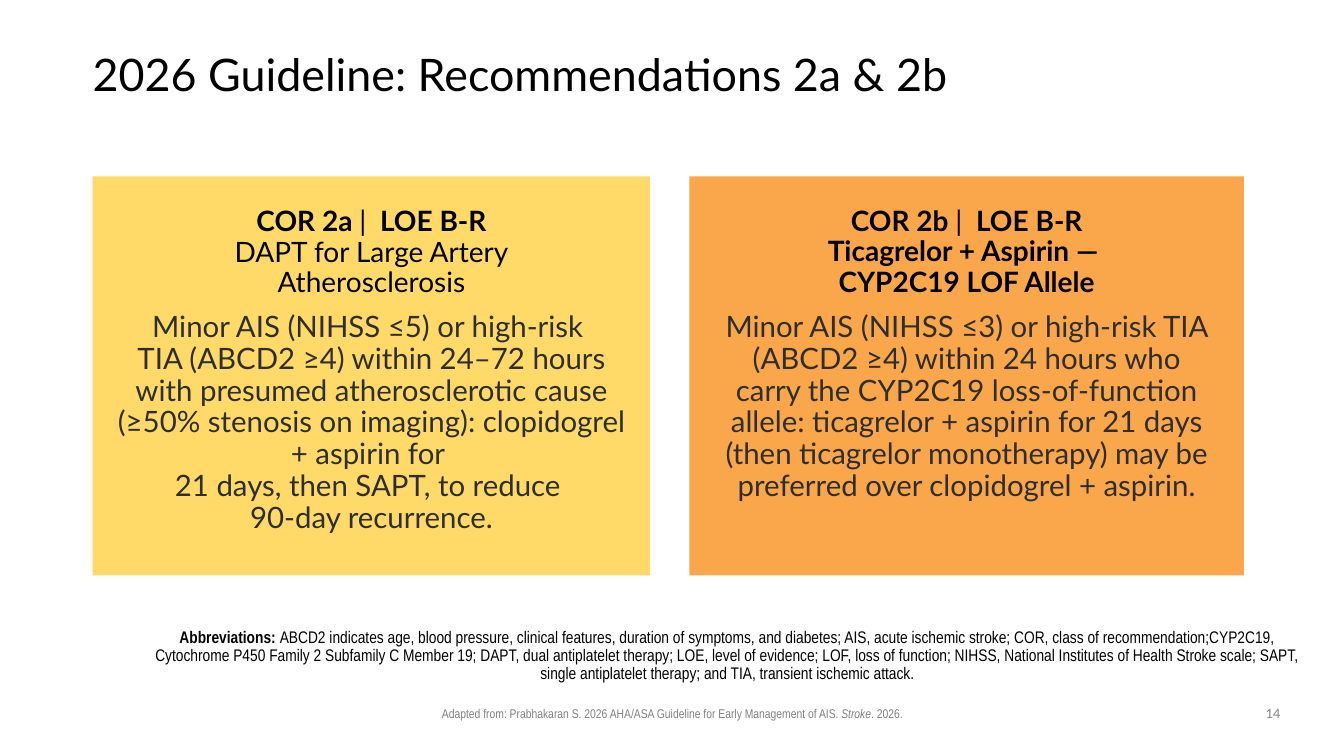
from pptx import Presentation
from pptx.dml.color import RGBColor
from pptx.enum.shapes import MSO_SHAPE
from pptx.enum.text import MSO_ANCHOR, PP_ALIGN
from pptx.util import Inches, Pt

RECTANGLE = MSO_SHAPE.RECTANGLE
TOP, MIDDLE, BOTTOM = MSO_ANCHOR.TOP, MSO_ANCHOR.MIDDLE, MSO_ANCHOR.BOTTOM
LEFT, CENTER = PP_ALIGN.LEFT, PP_ALIGN.CENTER

BODY_FONT, NOTE_FONT = "Lato", "Arial Narrow"
BLACK, CHARCOAL, GRAY = "000000", "2E2E2E", "808080"
YELLOW, ORANGE = "FFDA68", "FAA74B"
CARD_TOP, CARD_HEIGHT, CARD_TEXT_TOP = 23.33, 52.8, 26.8
FOOTER_TOP = 92.67


def color(value):
    return RGBColor.from_string(value)


class GuidelineSlide:
    """Places elements by percentages of the slide's width and height."""

    def __init__(self, deck):
        self.width, self.height = deck.slide_width, deck.slide_height
        self.shapes = deck.slides.add_slide(deck.slide_layouts[6]).shapes

    def area(self, left, top, width, height):
        return (
            int(left * self.width / 100),
            int(top * self.height / 100),
            int(width * self.width / 100),
            int(height * self.height / 100),
        )

    def panel(self, area, fill):
        panel = self.shapes.add_shape(RECTANGLE, *self.area(*area))
        panel.shadow.inherit = False
        panel.fill.solid()
        panel.fill.fore_color.rgb = color(fill)
        panel.line.fill.background()

    def frame(self, area, anchor=TOP, insets=(0.1, 0.05, 0.1, 0.05)):
        frame = self.shapes.add_textbox(*self.area(*area)).text_frame
        frame.word_wrap = True
        frame.vertical_anchor = anchor
        (frame.margin_left, frame.margin_top,
         frame.margin_right, frame.margin_bottom) = map(Inches, insets)
        return frame

    def fill_paragraph(self, paragraph, parts, size, shade=BLACK,
                       font=BODY_FONT, align=CENTER, spacing=0.9):
        paragraph.alignment = align
        paragraph.line_spacing = spacing
        paragraph.font.size = Pt(size)
        paragraph.font.name = font
        paragraph.font.color.rgb = color(shade)
        for text, emphasis in parts:
            for index, line in enumerate(text.split("\n")):
                if index:
                    paragraph.add_line_break()
                if line:
                    run = paragraph.add_run()
                    run.text = line
                    if emphasis == "bold":
                        run.font.bold = True
                    elif emphasis == "italic":
                        run.font.italic = True

    def text(self, area, parts, size, anchor=TOP,
             insets=(0.1, 0.05, 0.1, 0.05), **style):
        frame = self.frame(area, anchor, insets)
        self.fill_paragraph(frame.paragraphs[0], parts, size, **style)

    def card(self, left, width, margin, text_height, fill, heading, advice):
        self.panel((left, CARD_TOP, width, CARD_HEIGHT), fill)
        frame = self.frame(
            (left + margin, CARD_TEXT_TOP, width - 2 * margin, text_height))
        self.fill_paragraph(frame.paragraphs[0], heading, 20)
        recommendation = frame.add_paragraph()
        recommendation.space_before = Pt(10)
        self.fill_paragraph(recommendation, [(advice, None)], 21, CHARCOAL)


def main():
    deck = Presentation()
    deck.slide_width, deck.slide_height = Inches(13.33), Inches(7.5)
    slide = GuidelineSlide(deck)

    slide.text((6.9, 5.33, 86.25, 9.6),
               [("2026 Guideline: Recommendations 2a & 2b", None)], 32,
               MIDDLE, (0, 0, 0, 0), align=LEFT)

    slide.card(
        6.9, 41.48, 1.08, 48.9, YELLOW,
        [("COR 2a ", "bold"), ("|", None), ("  LOE B-R\n", "bold"),
         ("DAPT for Large Artery\nAtherosclerosis", None)],
        "Minor AIS (NIHSS ≤5) or high-risk \n"
        "TIA (ABCD2 ≥4) within 24–72 hours with presumed atherosclerotic "
        "cause (≥50% stenosis on imaging): clopidogrel + aspirin for \n"
        "21 days, then SAPT, to reduce \n"
        "90-day recurrence.")
    slide.card(
        51.3, 41.25, 1.6, 40.4, ORANGE,
        [("COR 2b ", "bold"), ("|", None),
         ("  LOE B-R\nTicagrelor + Aspirin — \nCYP2C19 LOF Allele", "bold")],
        "Minor AIS (NIHSS ≤3) or high-risk TIA (ABCD2 ≥4) within 24 hours "
        "who carry the CYP2C19 loss-of-function allele: ticagrelor + aspirin "
        "for 21 days (then ticagrelor monotherapy) may be preferred over "
        "clopidogrel + aspirin.")

    slide.text(
        (11.4, 81.47, 86.2, 9.6),
        [("Abbreviations: ", "bold"),
         ("ABCD2 indicates age, blood pressure, clinical features, duration "
          "of symptoms, and diabetes; AIS, acute ischemic stroke; COR, class "
          "of recommendation;CYP2C19, Cytochrome P450 Family 2 Subfamily C "
          "Member 19; DAPT, dual antiplatelet therapy; LOE, level of "
          "evidence; LOF, loss of function; NIHSS, National Institutes of "
          "Health Stroke scale; SAPT, single antiplatelet therapy; and TIA, "
          "transient ischemic attack.", None)],
        12, BOTTOM, (0, 0.05, 0.1, 0.05), font=NOTE_FONT)

    slide.text(
        (17.7, FOOTER_TOP, 64.65, 3.33),
        [("Adapted from: Prabhakaran S. 2026 AHA/ASA Guideline for Early "
          "Management of AIS. ", None),
         ("Stroke", "italic"), (". 2026.", None)],
        9, shade=GRAY, font=NOTE_FONT, spacing=1.0)
    slide.text((93.15, FOOTER_TOP, 3.15, 3.47), [("14", None)], 9,
               shade=GRAY, spacing=1.0)

    deck.save("out.pptx")


if __name__ == "__main__":
    main()
